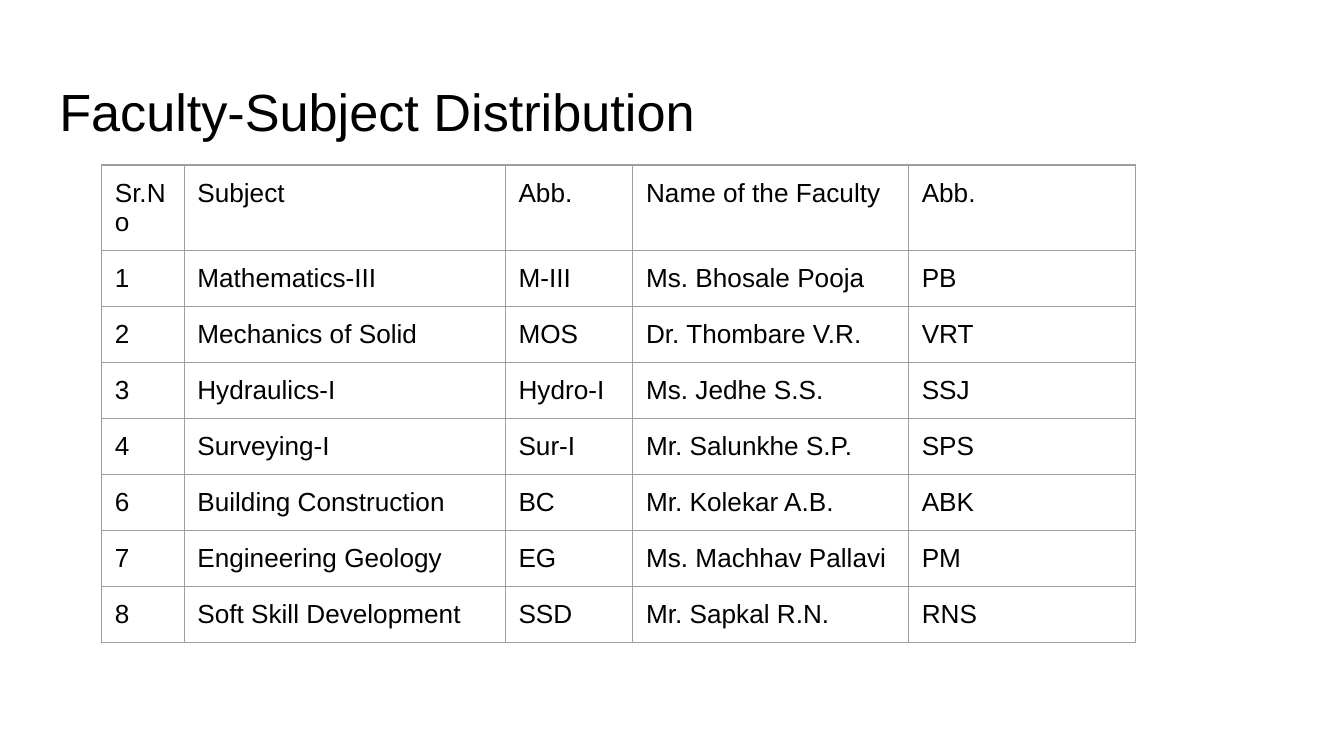
from dataclasses import dataclass
from typing import NamedTuple

import pptx
import pptx.dml.color
import pptx.enum.text
import pptx.oxml
import pptx.oxml.ns
import pptx.presentation
import pptx.slide
import pptx.table
import pptx.text.text
import pptx.util
from pptx.util import Cm


@dataclass(frozen=True)
class Theme:
    font: str = "Arial"
    text: str = "000000"
    border: str = "9E9E9E"
    border_width: float = 0.75
    title_size: int = 28
    cell_size: int = 14
    inset: float = 0.25


class Assignment(NamedTuple):
    number: str
    subject: str
    subject_code: str
    faculty: str
    faculty_code: str


THEME = Theme()
COLUMN_WIDTHS = Assignment(1.56, 6.07, 2.41, 5.21, 4.29)
ROW_HEIGHT = 1.06
ASSIGNMENTS = [
    Assignment("Sr.No", "Subject", "Abb.", "Name of the Faculty", "Abb."),
    Assignment("1", "Mathematics-III", "M-III", "Ms. Bhosale Pooja", "PB"),
    Assignment("2", "Mechanics of Solid", "MOS", "Dr. Thombare V.R.", "VRT"),
    Assignment("3", "Hydraulics-I", "Hydro-I", "Ms. Jedhe S.S.", "SSJ"),
    Assignment("4", "Surveying-I", "Sur-I", "Mr. Salunkhe S.P.", "SPS"),
    Assignment("6", "Building Construction", "BC", "Mr. Kolekar A.B.", "ABK"),
    Assignment("7", "Engineering Geology", "EG", "Ms. Machhav Pallavi", "PM"),
    Assignment("8", "Soft Skill Development", "SSD", "Mr. Sapkal R.N.", "RNS"),
]


def format_paragraph(para: pptx.text.text._Paragraph, size: int) -> None:
    para.alignment = pptx.enum.text.PP_ALIGN.LEFT
    para.font.name = THEME.font
    para.font.size = pptx.util.Pt(size)
    para.font.color.rgb = pptx.dml.color.RGBColor.from_string(THEME.text)


def set_insets(holder: pptx.text.text.TextFrame | pptx.table._Cell) -> None:
    for side in ("left", "top", "right", "bottom"):
        setattr(holder, f"margin_{side}", Cm(THEME.inset))


def add_borders(cell: pptx.table._Cell) -> None:
    properties = cell._tc.get_or_add_tcPr()
    width = pptx.util.Pt(THEME.border_width)
    for edge in ("lnL", "lnR", "lnT", "lnB"):
        properties.append(pptx.oxml.parse_xml(
            f'<a:{edge} {pptx.oxml.ns.nsdecls("a")} w="{width}"><a:solidFill>'
            f'<a:srgbClr val="{THEME.border}"/></a:solidFill></a:{edge}>'
        ))


def fill_cell(cell: pptx.table._Cell, text: str) -> None:
    cell.text = text
    set_insets(cell)
    format_paragraph(cell.text_frame.paragraphs[0], THEME.cell_size)
    add_borders(cell)
    cell.fill.background()


def add_title(slide: pptx.slide.Slide, text: str) -> None:
    title = slide.shapes.title
    title.left, title.top = Cm(0.87), Cm(1.24)
    title.width, title.height = Cm(23.67), Cm(1.6)
    frame = title.text_frame
    frame.text = text
    frame.vertical_anchor = pptx.enum.text.MSO_ANCHOR.TOP
    frame.auto_size = pptx.enum.text.MSO_AUTO_SIZE.NONE
    set_insets(frame)
    format_paragraph(frame.paragraphs[0], THEME.title_size)


def add_assignment_table(slide: pptx.slide.Slide) -> None:
    table = slide.shapes.add_table(
        len(ASSIGNMENTS), len(COLUMN_WIDTHS), Cm(1.92), Cm(3.12),
        Cm(sum(COLUMN_WIDTHS)), Cm(ROW_HEIGHT * len(ASSIGNMENTS)),
    ).table
    table.first_row = False
    table.horz_banding = False
    for column, width in zip(table.columns, COLUMN_WIDTHS):
        column.width = Cm(width)
    for row, assignment in zip(table.rows, ASSIGNMENTS):
        row.height = Cm(ROW_HEIGHT)
        for cell, text in zip(row.cells, assignment):
            fill_cell(cell, text)


def build_deck() -> pptx.presentation.Presentation:
    deck = pptx.Presentation()
    deck.slide_width, deck.slide_height = Cm(25.4), Cm(14.29)
    slide = deck.slides.add_slide(deck.slide_layouts.get_by_name("Title Only"))
    add_title(slide, "Faculty-Subject Distribution")
    add_assignment_table(slide)
    return deck


if __name__ == "__main__":
    build_deck().save("out.pptx")
